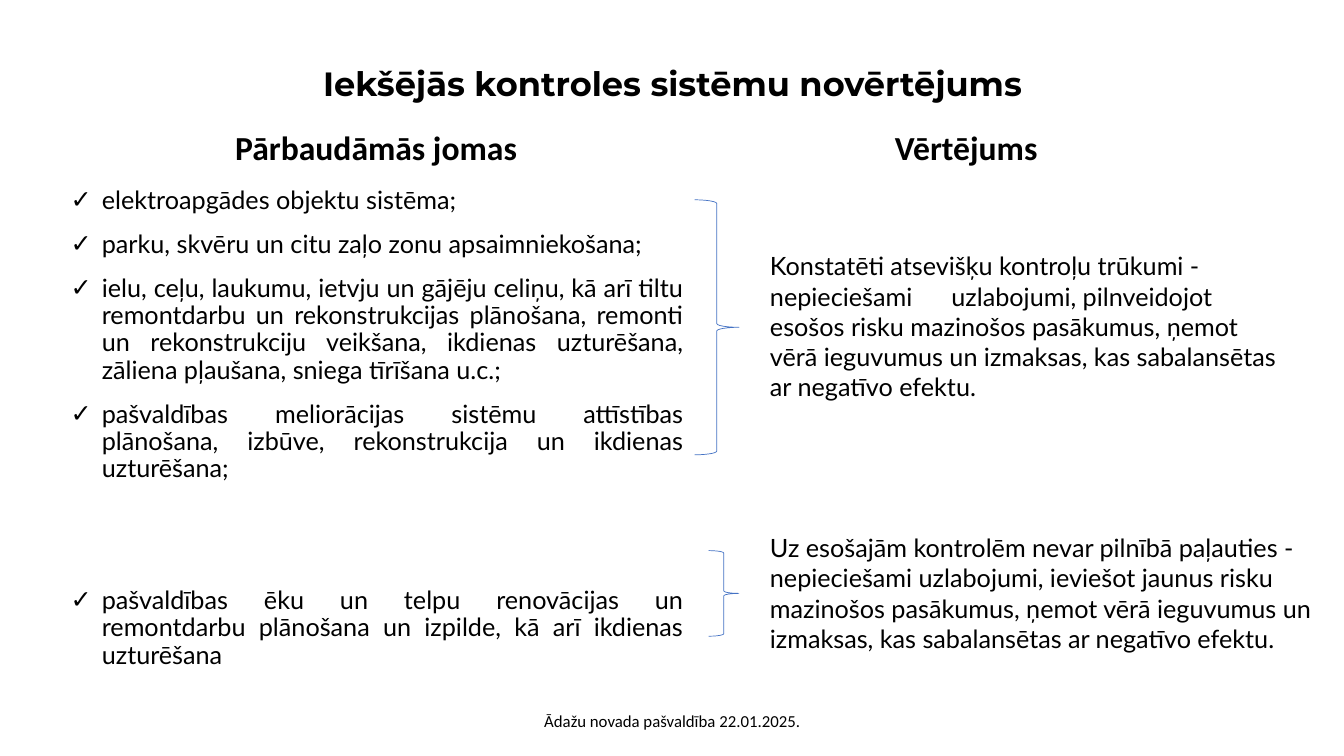
from lxml import etree
from pptx import Presentation
from pptx.dml.color import RGBColor
from pptx.enum.shapes import MSO_SHAPE
from pptx.enum.text import MSO_ANCHOR, MSO_AUTO_SIZE, PP_ALIGN
from pptx.oxml.ns import qn
from pptx.util import Inches, Pt

LEFT, CENTER, JUSTIFY = PP_ALIGN.LEFT, PP_ALIGN.CENTER, PP_ALIGN.JUSTIFY
TOP, MIDDLE, BOTTOM = MSO_ANCHOR.TOP, MSO_ANCHOR.MIDDLE, MSO_ANCHOR.BOTTOM
FIXED, GROW = MSO_AUTO_SIZE.NONE, MSO_AUTO_SIZE.SHAPE_TO_FIT_TEXT
BRACE = MSO_SHAPE.RIGHT_BRACE
COMPARISON = 4  # layout index

COLORS = {"text": "000000", "brace": "4472C4", "background": "FFFFFF"}
HEAD_TOP, HEAD_HEIGHT = 15.73, 7.07
BRACE_RIGHT, VERDICT_LEFT = 54.98, 56.55

AREAS = [
    "elektroapgādes objektu sistēma;",
    "parku, skvēru un citu zaļo zonu apsaimniekošana;",
    "ielu, ceļu, laukumu, ietvju un gājēju celiņu, kā arī tiltu remontdarbu un "
    "rekonstrukcijas plānošana, remonti un rekonstrukciju veikšana, ikdienas "
    "uzturēšana, zāliena pļaušana, sniega tīrīšana u.c.;",
    "pašvaldības meliorācijas sistēmu attīstības plānošana, izbūve, "
    "rekonstrukcija un ikdienas uzturēšana;",
    "pašvaldības ēku un telpu renovācijas un remontdarbu plānošana un izpilde, "
    "kā arī ikdienas uzturēšana",
]

# Centre height, brace width and height, text width and height, text
VERDICTS = [
    (43.3, 3.3, 33.73, 39.98, 21.6,
     "Konstatēti atsevišķu kontroļu trūkumi - nepieciešami\tuzlabojumi, "
     "pilnveidojot esošos risku mazinošos pasākumus, ņemot vērā ieguvumus un "
     "izmaksas, kas sabalansētas ar negatīvo efektu."),
    (78.5, 2.25, 11.33, 42.98, 17.47,
     "Uz esošajām kontrolēm nevar pilnībā paļauties - nepieciešami uzlabojumi, "
     "ieviešot jaunus risku mazinošos pasākumus, ņemot vērā ieguvumus un "
     "izmaksas, kas sabalansētas ar negatīvo efektu."),
]


def write(p, text, size=18, font="Lato", bold=False, align=LEFT,
          line=1.0, before=0, after=0):
    """Fill one paragraph with formatted text."""
    p.alignment, p.line_spacing = align, line
    p.space_before, p.space_after = Pt(before), Pt(after)
    r = p.add_run()
    r.text = text
    r.font.size, r.font.name, r.font.bold = Pt(size), font, bold
    r.font.color.rgb = RGBColor.from_string(COLORS["text"])


class Page:
    """The current slide; places are percentages of its width and height."""

    def __init__(self, prs):
        self.prs = prs
        self.s = prs.slides.add_slide(prs.slide_layouts[COMPARISON])
        fill = self.s.background.fill
        fill.solid()
        fill.fore_color.rgb = RGBColor.from_string(COLORS["background"])

    def box(self, x, y, w, h):
        sw, sh = self.prs.slide_width, self.prs.slide_height
        return [int(v * side / 100) for v, side in zip((x, y, w, h), (sw, sh, sw, sh))]

    def frame(self, sp, anchor, fit=FIXED):
        tf = sp.text_frame
        tf.word_wrap, tf.auto_size, tf.vertical_anchor = True, fit, anchor
        return tf

    def placeholder(self, idx, place, anchor):
        sp = self.s.placeholders[idx]
        sp.left, sp.top, sp.width, sp.height = self.box(*place)
        return self.frame(sp, anchor)

    def heading(self, idx, place, text, anchor=BOTTOM, **fmt):
        tf = self.placeholder(idx, place, anchor)
        write(tf.paragraphs[0], text, size=24, bold=True, align=CENTER, line=0.9, **fmt)

    def checklist(self, idx, place, items, last_gap):
        tf = self.placeholder(idx, place, TOP)
        for i, item in enumerate(items):
            p = tf.paragraphs[0] if i == 0 else tf.add_paragraph()
            p.level = 1
            before = last_gap if i == len(items) - 1 else 6
            write(p, item, align=JUSTIFY, line=0.9, before=before, after=6)
            pPr = p._p.get_or_add_pPr()
            pPr.set("marL", str(Inches(0.81)))
            pPr.set("indent", str(Inches(-0.31)))
            etree.SubElement(pPr, qn("a:buChar")).set("char", "✓")

    def text(self, place, text, anchor=TOP, fit=FIXED, tab=None, **fmt):
        sp = self.s.shapes.add_textbox(*self.box(*place))
        p = self.frame(sp, anchor, fit).paragraphs[0]
        write(p, text, **fmt)
        if tab:
            tabs = etree.SubElement(p._p.get_or_add_pPr(), qn("a:tabLst"))
            stop = etree.SubElement(tabs, qn("a:tab"))
            stop.set("pos", str(Inches(tab)))
            stop.set("algn", "l")

    def brace(self, place):
        sp = self.s.shapes.add_shape(BRACE, *self.box(*place))
        sp.shadow.inherit = False
        sp.fill.background()
        sp.line.color.rgb = RGBColor.from_string(COLORS["brace"])
        sp.line.width = Pt(0.5)

    def drop_empty(self):
        for sp in list(self.s.placeholders):
            if not sp.text_frame.text:
                sp._element.getparent().remove(sp._element)


def main():
    prs = Presentation()
    prs.slide_width, prs.slide_height = Inches(13.33), Inches(7.5)
    page = Page(prs)

    # Title and column headings
    page.heading(0, (6.9, 5.33, 86.27, 12), "Iekšējās kontroles sistēmu novērtējums",
                 anchor=MIDDLE, font="Montserrat")
    for idx, x, w, text in ((1, 6.83, 42.31, "Pārbaudāmās jomas"),
                            (3, 50.63, 42.53, "Vērtējums")):
        page.heading(idx, (x, HEAD_TOP, w, HEAD_HEIGHT), text, font="Calibri", before=10)

    # Areas under review, the last one set apart
    page.checklist(2, (0.75, 24.13, 50.85, 65.87), AREAS, last_gap=69)

    # Braces with their verdicts, centred on the same height
    for middle, brace_w, brace_h, w, h, text in VERDICTS:
        page.brace((BRACE_RIGHT - brace_w, middle - brace_h / 2, brace_w, brace_h))
        page.text((VERDICT_LEFT, middle - h / 2, w, h), text, fit=GROW,
                  tab=1.8 if "\t" in text else None)

    # Footer
    page.text((33.15, 92.67, 33.75, 5.33), "Ādažu novada pašvaldība 22.01.2025.",
              anchor=MIDDLE, size=12, font="Calibri", align=CENTER)

    page.drop_empty()
    prs.save("out.pptx")


if __name__ == "__main__":
    main()
